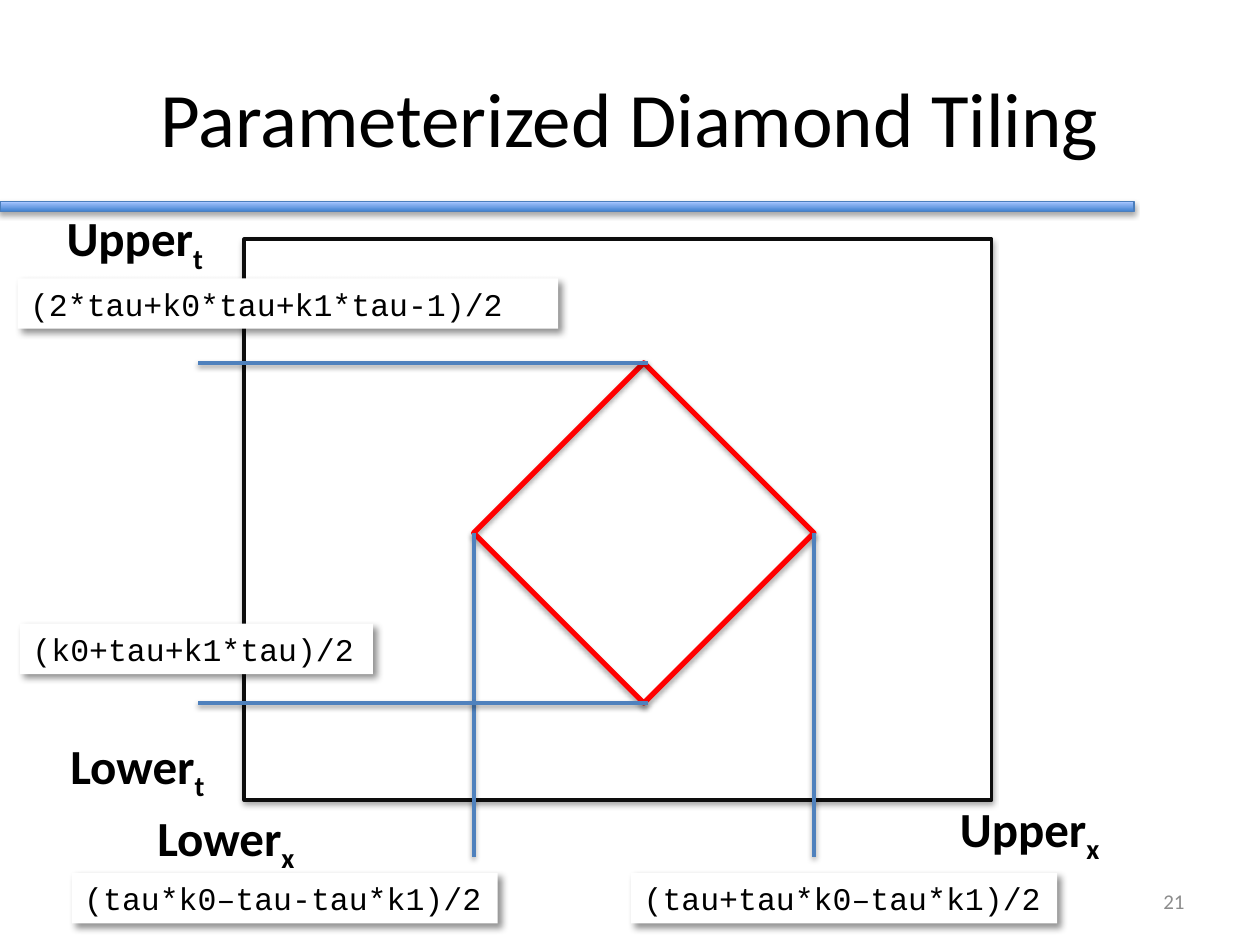
from lxml.etree import SubElement
from pptx import Presentation
from pptx.dml.color import RGBColor
from pptx.enum.shapes import MSO_CONNECTOR as Link, MSO_SHAPE as Preset
from pptx.enum.text import MSO_ANCHOR as Anchor, PP_ALIGN as Align
from pptx.oxml.ns import qn
from pptx.util import Inches, Pt

COLUMNS, ROWS = 100, 75
WIDTH, HEIGHT = Inches(10), Inches(7.5)
SHAPE_SHADOW = (35, 3.1, 1.8, 90)
LINE_SHADOW = (38, 3.1, 1.6, 90)
CARD_SHADOW = (43, 4, 3, 45)
CENTRE_X, CENTRE_Y, REACH = 51.1, 42.3, 13.5


def cols(count):
    return round(WIDTH * count / COLUMNS)


def rows(count):
    return round(HEIGHT * count / ROWS)


def area(left, top, width, height):
    return cols(left), rows(top), cols(width), rows(height)


def paint(color, value):
    color.rgb = RGBColor.from_string(value)


def add_shadow(shape, alpha, blur, distance, angle):
    effects = SubElement(shape._element.spPr, qn("a:effectLst"))
    shadow = SubElement(effects, qn("a:outerShdw"), blurRad=str(Pt(blur)),
                        dist=str(Pt(distance)), dir=str(angle * 60000),
                        rotWithShape="0")
    color = SubElement(shadow, qn("a:srgbClr"), val="000000")
    SubElement(color, qn("a:alpha"), val=str(alpha * 1000))


def add_outline(page, preset, place, fill, line, weight, shadow=SHAPE_SHADOW):
    shape = page.shapes.add_shape(preset, *area(*place))
    if fill:
        shape.fill.solid()
        paint(shape.fill.fore_color, fill)
    else:
        shape.fill.background()
    if line:
        paint(shape.line.color, line)
        shape.line.width = Pt(weight)
    else:
        shape.line.fill.background()
    add_shadow(shape, *shadow)
    return shape


def add_bar(page):
    bar = add_outline(page, Preset.RECTANGLE, (0, 16, 90, 0.8),
                      "3F80CE", "4B7EBC", 0.75)
    bar.fill.gradient()
    bar.fill.gradient_angle = 90
    for stop, value in zip(bar.fill.gradient_stops, ("3F80CE", "A4C4FF")):
        paint(stop.color, value)


def write(box, text, size, font="Calibri", color="000000", align=Align.LEFT,
          anchor=Anchor.TOP, wrap=False, bold=False):
    frame = box.text_frame
    frame.word_wrap = wrap
    frame.vertical_anchor = anchor
    para = frame.paragraphs[0]
    para.alignment = align
    para.font.size = Pt(size)
    para.font.name = font
    para.font.bold = bold
    paint(para.font.color, color)
    para.add_run().text = text
    return para


def add_text(page, place, text, size, **style):
    return write(page.shapes.add_textbox(*area(*place)), text, size, **style)


def add_label(page, left, top, width, word, axis):
    para = add_text(page, (left, top, width, 5.7), word, 28, bold=True)
    span = para.add_run()
    span.text = axis
    span.font._element.set("baseline", "-25000")


def add_formula(page, left, top, width, text, wrap=False):
    card = add_outline(page, Preset.RECTANGLE, (left, top, width, 4),
                       "FFFFFF", None, 0, CARD_SHADOW)
    write(card, text, 18, font="Courier New", wrap=wrap)


def add_guide(page, start, end):
    guide = page.shapes.add_connector(
        Link.STRAIGHT, cols(start[0]), rows(start[1]), cols(end[0]), rows(end[1]))
    paint(guide.line.color, "4F81BD")
    guide.line.width = Pt(2)
    add_shadow(guide, *LINE_SHADOW)


def main():
    deck = Presentation()
    deck.slide_width, deck.slide_height = WIDTH, HEIGHT
    page = deck.slides.add_slide(deck.slide_layouts[6])

    add_bar(page)
    add_outline(page, Preset.RECTANGLE, (19.4, 19, 59.3, 44.5),
                "FFFFFF", "0D0D0D", 2.25)
    add_text(page, (5, 3, 90, 12.5), "Parameterized Diamond Tiling", 44,
             align=Align.CENTER, anchor=Anchor.MIDDLE, wrap=True)
    add_text(page, (71.7, 69.5, 23.3, 4), "21", 12, color="8C8C8C",
             align=Align.RIGHT, anchor=Anchor.MIDDLE, wrap=True)
    add_outline(page, Preset.DIAMOND,
                (CENTRE_X - REACH, CENTRE_Y - REACH, 2 * REACH, 2 * REACH),
                None, "FF0000", 3)

    for side, left, text in ((-1, 5.7, "(tau*k0–tau-tau*k1)/2"),
                             (1, 50.1, "(tau+tau*k0–tau*k1)/2")):
        x = CENTRE_X + side * REACH
        add_formula(page, left, 69.3, 33.8, text)
        add_guide(page, (x, CENTRE_Y), (x, 68))

    for side, left, top, width, text in (
            (-1, 1.4, 22.1, 42.9, "(2*tau+k0*tau+k1*tau-1)/2"),
            (1, 1.6, 49.5, 28, "(k0+tau+k1*tau)/2")):
        y = CENTRE_Y + side * REACH
        add_formula(page, left, top, width, text, wrap=True)
        add_guide(page, (CENTRE_X + 0.3, y), (15.7, y))

    for label in ((75.2, 62.9, 13.4, "Upper", "x"),
                  (11.5, 63.6, 13.4, "Lower", "x"),
                  (4.6, 57.9, 13, "Lower", "t"),
                  (4.3, 16, 13.1, "Upper", "t")):
        add_label(page, *label)

    deck.save("out.pptx")


if __name__ == "__main__":
    main()
